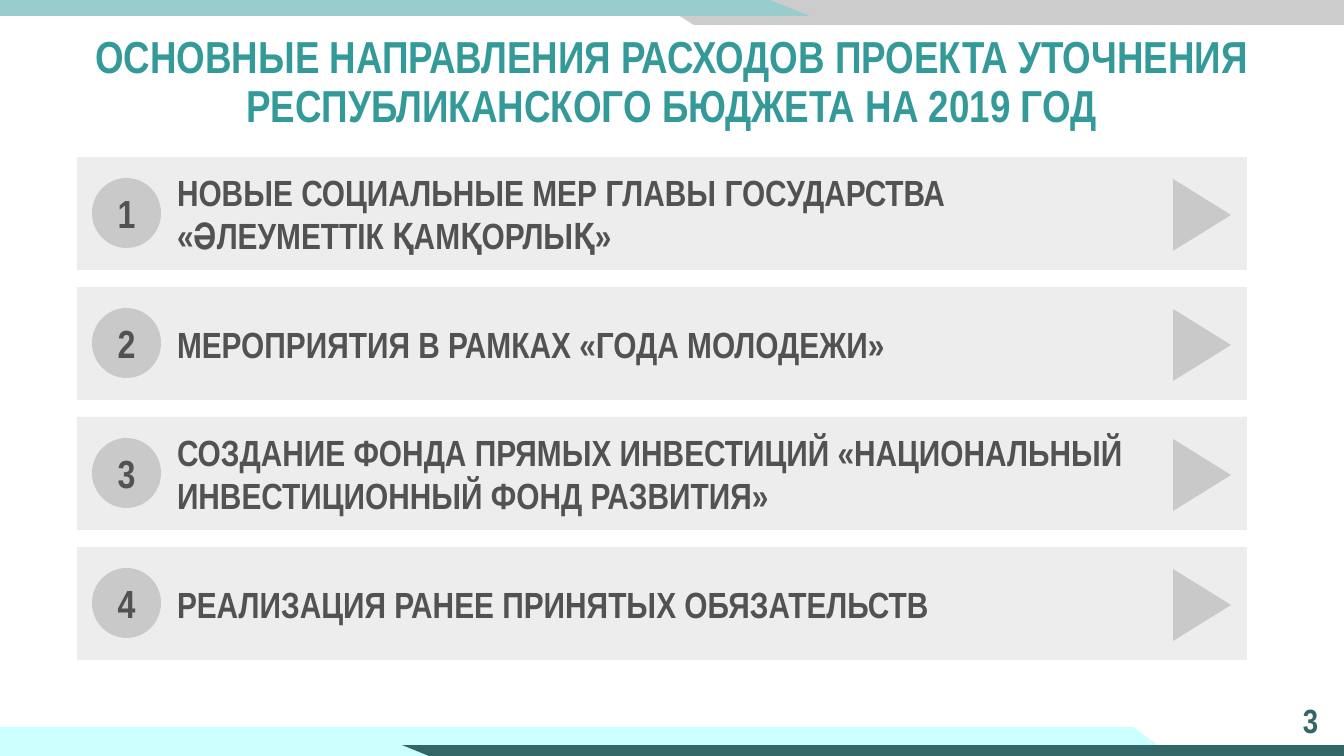
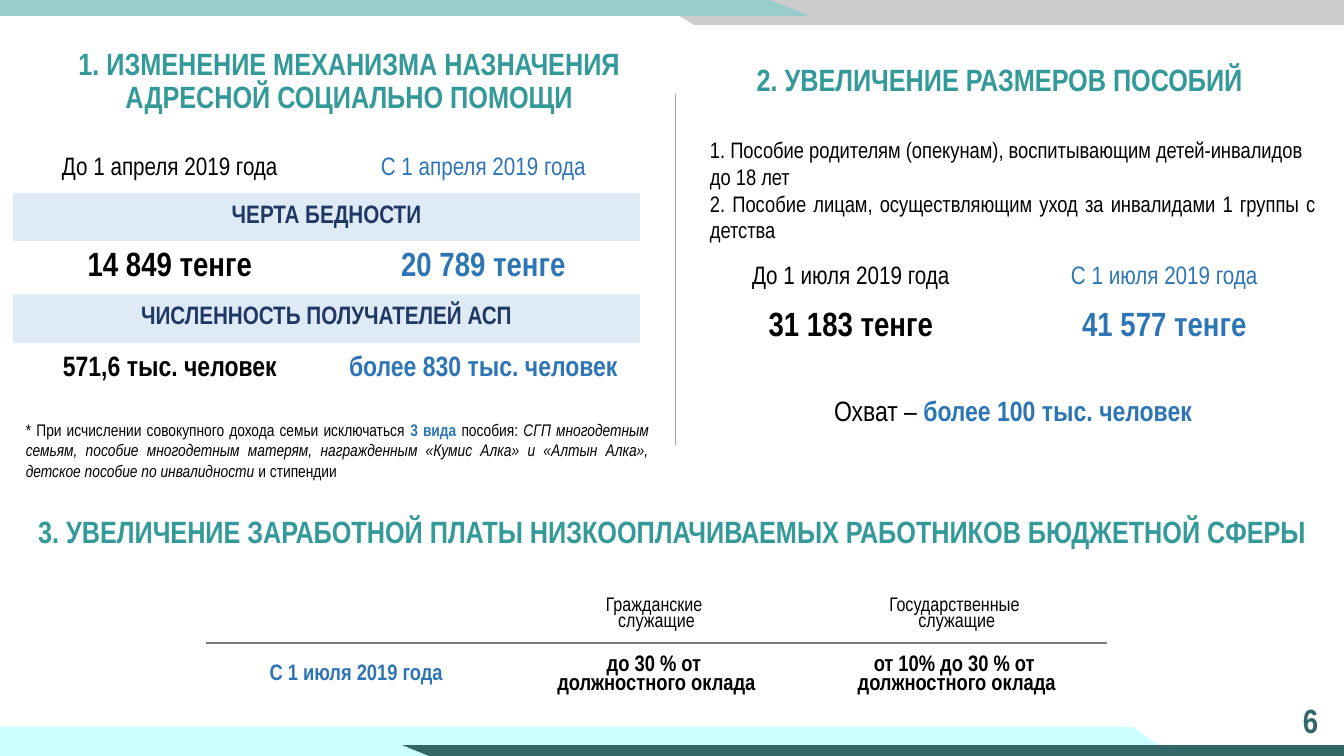
from collections import namedtuple
from dataclasses import dataclass

from lxml.etree import SubElement
from pptx import Presentation
from pptx.dml.color import RGBColor
from pptx.enum.shapes import MSO_CONNECTOR, MSO_SHAPE
from pptx.enum.text import MSO_ANCHOR, PP_ALIGN
from pptx.oxml import parse_xml
from pptx.oxml.ns import nsdecls, qn
from pptx.util import Pt

PX = 9071  # EMU in one px
WIDTH, HEIGHT = 1344, 756
NO_GRID_STYLE = "{2D5ABB26-0587-4C30-8999-92F81FD0307C}"


@dataclass(frozen=True)
class Theme:
    font: str = "Arial Narrow"
    # colours
    title: str = "339999"
    top_left: str = "99CCCC"
    top_right: str = "CCCCCC"
    bottom_left: str = "CCFFFF"
    bottom_right: str = "336666"
    panel: str = "EDEDED"
    marker: str = "C9C9C9"
    panel_text: str = "525252"
    body: str = "000000"
    accent: str = "2E75B6"
    heading_fill: str = "DEEBF7"
    heading_text: str = "203864"
    divider: str = "A6A6A6"
    rule: str = "7C7C7C"
    # type sizes
    main_title: int = 32
    number: int = 28
    direction: int = 26
    amount: int = 24
    section_title: int = 22
    people: int = 20
    label: int = 18
    detail: int = 16
    column_head: int = 14
    footnote: int = 12


theme = Theme()


def place(slide, box, kind=None, fill=None, rotation=0):
    """Add a borderless filled shape, or a text box when no kind is given; return its text frame."""
    left, top, width, height = [value * PX for value in box]
    if kind is None:
        return slide.shapes.add_textbox(left, top, width, height).text_frame
    shape = slide.shapes.add_shape(kind, left, top, width, height)
    shape.shadow.inherit = False
    shape.fill.solid()
    shape.fill.fore_color.rgb = RGBColor.from_string(fill)
    shape.line.fill.background()
    shape.rotation = rotation
    return shape.text_frame


def write_text(frame, *paragraphs, size, color, bold=False, align=PP_ALIGN.CENTER,
               spacing=None, anchor=MSO_ANCHOR.MIDDLE):
    """Fill a frame; a paragraph is a string or a list of (text, overrides) runs."""
    frame.word_wrap = True
    frame.vertical_anchor = anchor
    for index, content in enumerate(paragraphs):
        paragraph = frame.add_paragraph() if index else frame.paragraphs[0]
        paragraph.alignment = align
        paragraph.line_spacing = spacing
        runs = [(content, {})] if isinstance(content, str) else content
        for text, overrides in runs:
            run = paragraph.add_run()
            run.text = text
            run.font.name = theme.font
            run.font.size = Pt(size)
            run.font.bold = overrides.get("bold", bold)
            run.font.italic = overrides.get("italic", False)
            run.font.color.rgb = RGBColor.from_string(overrides.get("color", color))


presentation = Presentation()
presentation.slide_width = WIDTH * PX
presentation.slide_height = HEIGHT * PX
blank_layout = presentation.slide_layouts[6]

# Bands: each is a bar whose inner end is slanted by a triangle centred on that end
Band = namedtuple("Band", "start end inner_end tip_width top height color tip_rotation")
bands = [
    Band(694, WIDTH, 694, 80, 0, 25, theme.top_right, 180),
    Band(0, 770, 770, 80, 0, 16, theme.top_left, 0),
    Band(0, 1133, 1133, 80, 727, 29, theme.bottom_left, 0),
    Band(429, WIDTH, 429, 54, 745, 11, theme.bottom_right, 180),
]
slides = []
for page_number in ("3", "6"):
    slide = presentation.slides.add_slide(blank_layout)
    for band in bands:
        bar_box = (band.start, band.top, band.end - band.start, band.height)
        tip_box = (band.inner_end - band.tip_width // 2, band.top, band.tip_width, band.height)
        place(slide, bar_box, MSO_SHAPE.RECTANGLE, band.color)
        place(slide, tip_box, MSO_SHAPE.ISOSCELES_TRIANGLE, band.color, band.tip_rotation)
    write_text(place(slide, (1277, 701, 67, 44)), page_number, size=theme.amount,
               color=theme.bottom_right, bold=True, spacing=0.9)
    slides.append(slide)
directions_slide, benefits_slide = slides

# Titles
titles = [
    (directions_slide, (0, 35, WIDTH, 97), theme.main_title,
     "ОСНОВНЫЕ НАПРАВЛЕНИЯ РАСХОДОВ ПРОЕКТА УТОЧНЕНИЯ РЕСПУБЛИКАНСКОГО БЮДЖЕТА НА 2019 ГОД"),
    (benefits_slide, (7, 35, 684, 94), theme.section_title,
     "1. ИЗМЕНЕНИЕ МЕХАНИЗМА НАЗНАЧЕНИЯ АДРЕСНОЙ СОЦИАЛЬНО ПОМОЩИ"),
    (benefits_slide, (654, 35, 691, 94), theme.section_title,
     "2. УВЕЛИЧЕНИЕ РАЗМЕРОВ ПОСОБИЙ"),
    (benefits_slide, (0, 501, WIDTH, 65), theme.section_title,
     "3. УВЕЛИЧЕНИЕ ЗАРАБОТНОЙ ПЛАТЫ НИЗКООПЛАЧИВАЕМЫХ РАБОТНИКОВ БЮДЖЕТНОЙ СФЕРЫ"),
]
for slide, box, size, text in titles:
    write_text(place(slide, box), text, size=size, color=theme.title, bold=True, spacing=0.9)

# Slide 1: numbered spending directions
PANEL_TOP, PANEL_STEP, PANEL_HEIGHT = 157, 130, 113
CIRCLE_HEIGHT, ARROW_HEIGHT = 70, 58
directions = [
    ["НОВЫЕ СОЦИАЛЬНЫЕ МЕР ГЛАВЫ ГОСУДАРСТВА", "«ӘЛЕУМЕТТІК ҚАМҚОРЛЫҚ»"],
    ["МЕРОПРИЯТИЯ В РАМКАХ «ГОДА МОЛОДЕЖИ»"],
    ["СОЗДАНИЕ ФОНДА ПРЯМЫХ ИНВЕСТИЦИЙ «НАЦИОНАЛЬНЫЙ ИНВЕСТИЦИОННЫЙ ФОНД РАЗВИТИЯ»"],
    ["РЕАЛИЗАЦИЯ РАНЕЕ ПРИНЯТЫХ ОБЯЗАТЕЛЬСТВ"],
]
for index, lines in enumerate(directions):
    top = PANEL_TOP + PANEL_STEP * index
    circle_top = top + (PANEL_HEIGHT - CIRCLE_HEIGHT) // 2
    arrow_top = top + (PANEL_HEIGHT - ARROW_HEIGHT) // 2 + 2
    panel = place(directions_slide, (77, top, 1170, PANEL_HEIGHT),
                  MSO_SHAPE.RECTANGLE, theme.panel)
    panel.margin_left = 100 * PX
    write_text(panel, *lines, size=theme.direction, color=theme.panel_text, bold=True,
               align=PP_ALIGN.LEFT)
    circle = place(directions_slide, (92, circle_top, 69, CIRCLE_HEIGHT),
                   MSO_SHAPE.OVAL, theme.marker)
    write_text(circle, str(index + 1), size=theme.number, color=theme.panel_text, bold=True)
    place(directions_slide, (1166, arrow_top, 72, ARROW_HEIGHT),
          MSO_SHAPE.ISOSCELES_TRIANGLE, theme.marker, 90)

# Slide 2: tables; a row with a single text is a heading across all columns
Row = namedtuple("Row", "height size bold texts")
TablePlan = namedtuple("TablePlan", "left top width column_colors spacing rows")
before_after = [theme.body, theme.accent]
poverty_plan = TablePlan(13, 145, 627, before_after, None, [
    Row(48, theme.label, False, ["До 1 апреля 2019 года", "С 1 апреля 2019 года"]),
    Row(48, theme.label, True, ["ЧЕРТА БЕДНОСТИ"]),
    Row(53, theme.amount, True, ["14 849 тенге", "20 789 тенге"]),
    Row(49, theme.label, True, ["ЧИСЛЕННОСТЬ ПОЛУЧАТЕЛЕЙ АСП"]),
    Row(52, theme.people, True, ["571,6 тыс. человек", "более 830 тыс. человек"]),
])
allowance_plan = TablePlan(694, 254, 627, before_after, None, [
    Row(48, theme.label, False, ["До 1 июля 2019 года", "С 1 июля 2019 года"]),
    Row(52, theme.amount, True, ["31 183 тенге", "41 577 тенге"]),
])
wage_plan = TablePlan(206, 586, 901, [theme.accent, theme.body, theme.body], 0.9, [
    Row(57, theme.column_head, False,
        ["", "Гражданские \nслужащие", "Государственные \nслужащие"]),
    Row(64, theme.detail, True,
        ["С 1 июля 2019 года", "до 30 % от \nдолжностного оклада",
         "от 10% до 30 % от \nдолжностного оклада"]),
])
table_frames = []
for plan in (poverty_plan, allowance_plan, wage_plan):
    height = sum(row.height for row in plan.rows)
    table_frame = benefits_slide.shapes.add_table(
        len(plan.rows), len(plan.column_colors),
        plan.left * PX, plan.top * PX, plan.width * PX, height * PX)
    table_frame.element.find(".//" + qn("a:tableStyleId")).text = NO_GRID_STYLE
    table_frames.append(table_frame)
    table = table_frame.table
    table.first_row = table.horz_banding = False
    for table_row, row in zip(table.rows, plan.rows):
        table_row.height = row.height * PX
        cells = list(table_row.cells)
        is_heading = len(row.texts) == 1
        for cell in cells:
            cell.vertical_anchor = MSO_ANCHOR.MIDDLE
            if is_heading:
                cell.fill.solid()
                cell.fill.fore_color.rgb = RGBColor.from_string(theme.heading_fill)
            else:
                cell.fill.background()
        if is_heading:
            cells[0].merge(cells[-1])
        colors = [theme.heading_text] if is_heading else plan.column_colors
        for cell, text, color in zip(cells, row.texts, colors):
            if text:
                write_text(cell.text_frame, *text.split("\n"), size=row.size, color=color,
                           bold=row.bold, spacing=plan.spacing)

# Rule between the two rows of the wage table
wage_rows = table_frames[-1].element.iter(qn("a:tr"))
for wage_row, edge in zip(wage_rows, ("lnB", "lnT")):
    for cell_properties in wage_row.iter(qn("a:tcPr")):
        cell_properties.insert(0, parse_xml(
            f'<a:{edge} {nsdecls("a")} w="{Pt(1)}"><a:solidFill>'
            f'<a:srgbClr val="{theme.rule}"/></a:solidFill></a:{edge}>'))

# Slide 2: notes on the benefits
highlight = {"color": theme.accent, "bold": True}
footnote = place(benefits_slide, (16, 415, 643, 72))
write_text(footnote, [
    ("* При исчислении совокупного дохода семьи исключаться", {}),
    (" 3 вида ", highlight),
    ("пособия: ", {}),
    ("СГП многодетным семьям, пособие многодетным матерям, награжденным «Кумис Алка» "
     "и «Алтын Алка», детское пособие по инвалидности", {"italic": True}),
    (" и стипендии", {}),
], size=theme.footnote, color=theme.body, align=PP_ALIGN.JUSTIFY, anchor=MSO_ANCHOR.TOP)

benefits = place(benefits_slide, (700, 131, 626, 119))
write_text(benefits,
           "1. Пособие родителям (опекунам), воспитывающим детей-инвалидов до 18 лет",
           "2. Пособие лицам, осуществляющим уход за инвалидами 1 группы с детства",
           size=theme.detail, color=theme.body, align=PP_ALIGN.JUSTIFY, anchor=MSO_ANCHOR.TOP)
benefits.paragraphs[0].alignment = PP_ALIGN.LEFT

coverage = place(benefits_slide, (700, 389, 626, 44))
write_text(coverage, [("Охват – ", {}), ("более 100 тыс. человек", highlight)],
           size=theme.people, color=theme.body, anchor=MSO_ANCHOR.TOP)

divider = benefits_slide.shapes.add_connector(
    MSO_CONNECTOR.STRAIGHT, 675 * PX, 94 * PX, 675 * PX, 445 * PX)
divider.line.color.rgb = RGBColor.from_string(theme.divider)
divider.line.width = Pt(0.5)
SubElement(divider.element.spPr, qn("a:effectLst"))

presentation.save("out.pptx")
